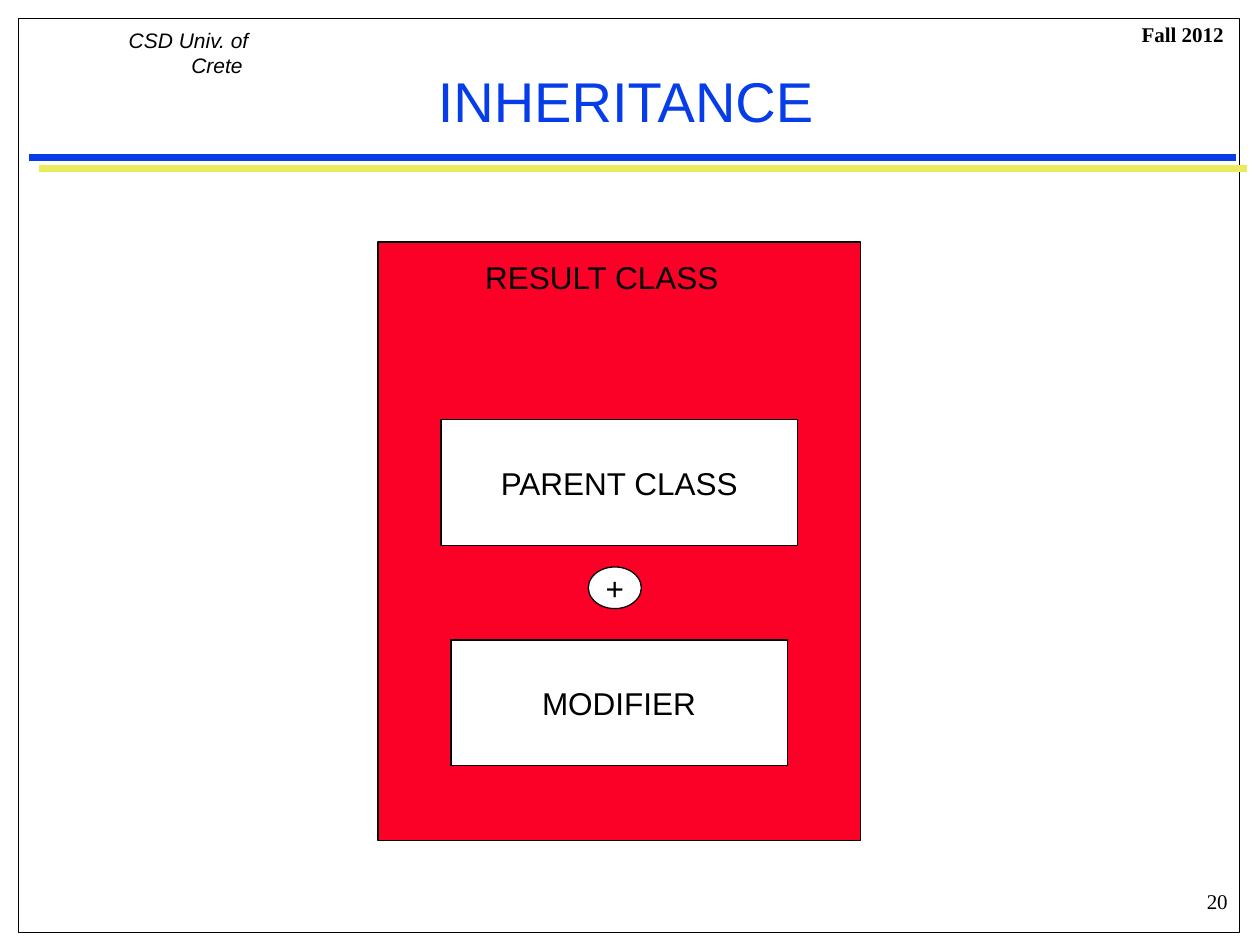
from lxml.etree import SubElement
from pptx import Presentation
from pptx.dml.color import RGBColor
from pptx.enum.shapes import MSO_CONNECTOR, MSO_SHAPE
from pptx.enum.text import MSO_ANCHOR, PP_ALIGN
from pptx.oxml.ns import qn
from pptx.util import Cm, Pt

BLACK, WHITE, BLUE, RED, YELLOW = "000000", "FFFFFF", "063DE8", "FC0128", "EAEC5E"


def color(hex_string):
    return RGBColor.from_string(hex_string)


def set_text(shape, text, size=18, font="Arial", fill=BLACK, bold=False, italic=False,
             align=PP_ALIGN.CENTER, anchor=MSO_ANCHOR.MIDDLE, wrap=True):
    frame = shape.text_frame
    frame.word_wrap = wrap
    frame.vertical_anchor = anchor
    paragraph = frame.paragraphs[0]
    paragraph.alignment = align
    run = paragraph.add_run()
    run.text = text
    run.font.size = Pt(size)
    run.font.name = font
    run.font.bold = bold
    run.font.italic = italic
    run.font.color.rgb = color(fill)


def add_text(slide, box, text, **text_format):
    shape = slide.shapes.add_textbox(*map(Cm, box))
    set_text(shape, text, anchor=MSO_ANCHOR.TOP, **text_format)


def add_outlined(slide, kind, box, fill=None, line_width=0.75):
    shape = slide.shapes.add_shape(kind, *map(Cm, box))
    shape.shadow.inherit = False
    if fill:
        shape.fill.solid()
        shape.fill.fore_color.rgb = color(fill)
    else:
        shape.fill.background()
    shape.line.color.rgb = color(BLACK)
    shape.line.width = Pt(line_width)
    return shape


def add_shadowed_rule(slide, left, top, width):
    """Blue line with a hard yellow shadow towards the lower right."""
    rule = slide.shapes.add_connector(
        MSO_CONNECTOR.STRAIGHT, Cm(left), Cm(top), Cm(left + width), Cm(top))
    rule.line.color.rgb = color(BLUE)
    rule.line.width = Pt(4)
    effects = SubElement(rule._element.spPr, qn("a:effectLst"))
    shadow = SubElement(effects, qn("a:outerShdw"), dist=str(Pt(8.5)),
                        dir=str(45 * 60000), algn="ctr", rotWithShape="0")
    SubElement(shadow, qn("a:srgbClr"), val=YELLOW)


def add_page_frame(slide, left, top, width, height):
    add_outlined(slide, MSO_SHAPE.RECTANGLE, (left, top, width, height), line_width=0.5)
    add_shadowed_rule(slide, left + 0.2, top + 2.8, 24.34)
    right, bottom = left + width, top + height
    add_text(slide, (left + 0.94, top + 0.05, 3.94, 0.76), "CSD Univ. of Crete ",
             size=12, italic=True, align=PP_ALIGN.RIGHT)
    add_text(slide, (right - 5.25, top - 0.08, 5.18, 0.76), "Fall 2012",
             size=12, font="Times New Roman", bold=True, align=PP_ALIGN.RIGHT)
    add_text(slide, (right - 1.34, bottom - 1.02, 1.35, 0.76), "20",
             size=12, font="Times New Roman", align=PP_ALIGN.RIGHT)


def place_title(slide, left, top, width, height):
    title = slide.shapes.title
    title.left, title.top, title.width, title.height = map(Cm, (left, top, width, height))
    set_text(title, "INHERITANCE", size=32, fill=BLUE)


def add_result_class(slide, left, top, width, height):
    add_outlined(slide, MSO_SHAPE.RECTANGLE, (left, top, width, height), RED)
    parts = [
        (MSO_SHAPE.RECTANGLE, "PARENT CLASS", 1.27, 3.58, 7.19, 2.54),
        (MSO_SHAPE.RECTANGLE, "MODIFIER", 1.47, 8.02, 6.78, 2.54),
        (MSO_SHAPE.OVAL, "+", 4.24, 6.55, 1.07, 0.84),
    ]
    for kind, label, x, y, part_width, part_height in parts:
        part = add_outlined(slide, kind, (left + x, top + y, part_width, part_height), WHITE)
        set_text(part, label, wrap=False)
    add_text(slide, (left + 1.91, top + 0.2, 6.55, 1.27), "RESULT CLASS",
             align=PP_ALIGN.LEFT)


def main():
    presentation = Presentation()
    presentation.slide_width, presentation.slide_height = Cm(25.4), Cm(19.05)
    slide = presentation.slides.add_slide(presentation.slide_layouts[5])
    add_page_frame(slide, 0.38, 0.38, 24.61, 18.42)
    place_title(slide, 0.79, 1.07, 23.65, 1.91)
    add_result_class(slide, 7.62, 4.88, 9.73, 12.07)
    presentation.save("out.pptx")


if __name__ == "__main__":
    main()
